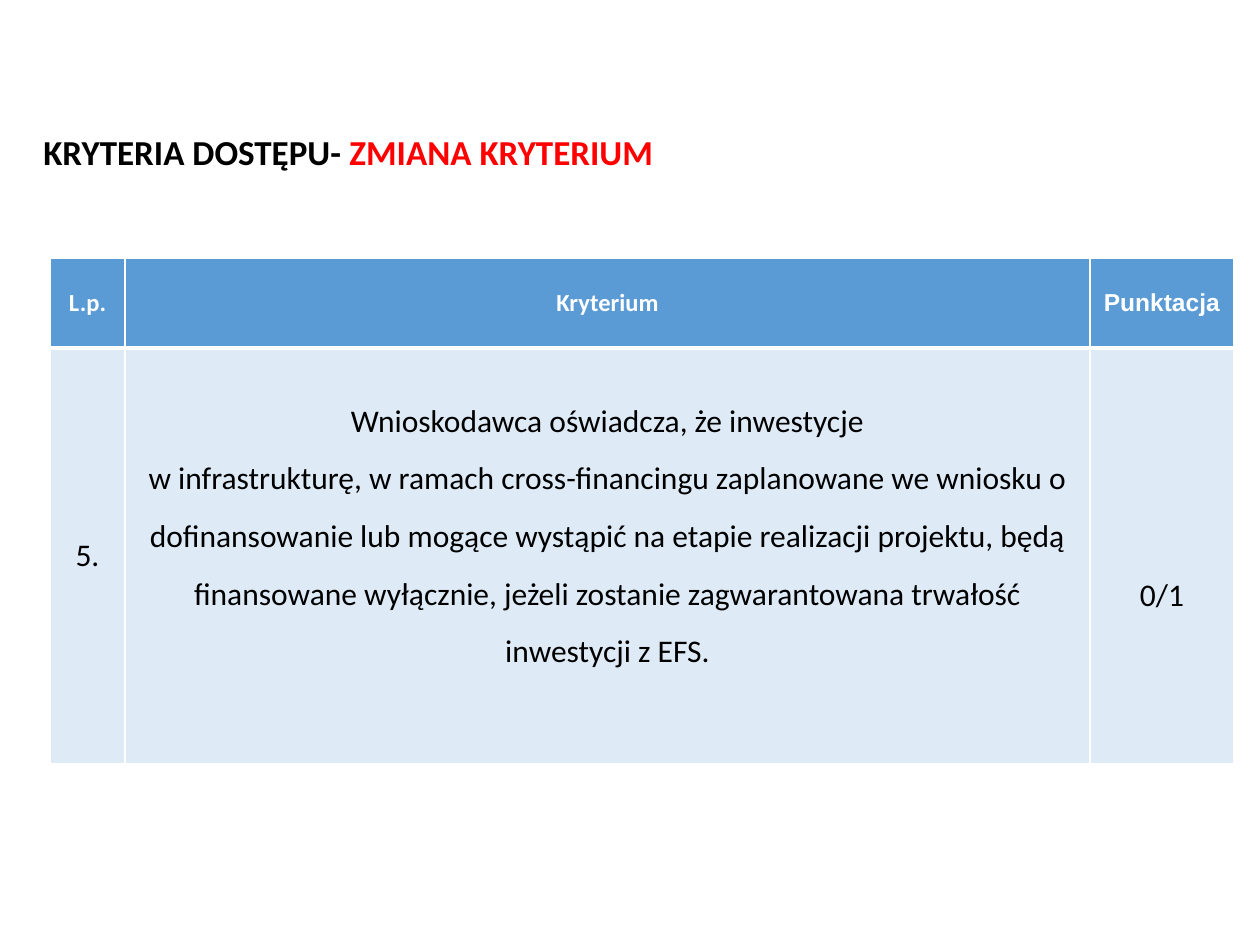
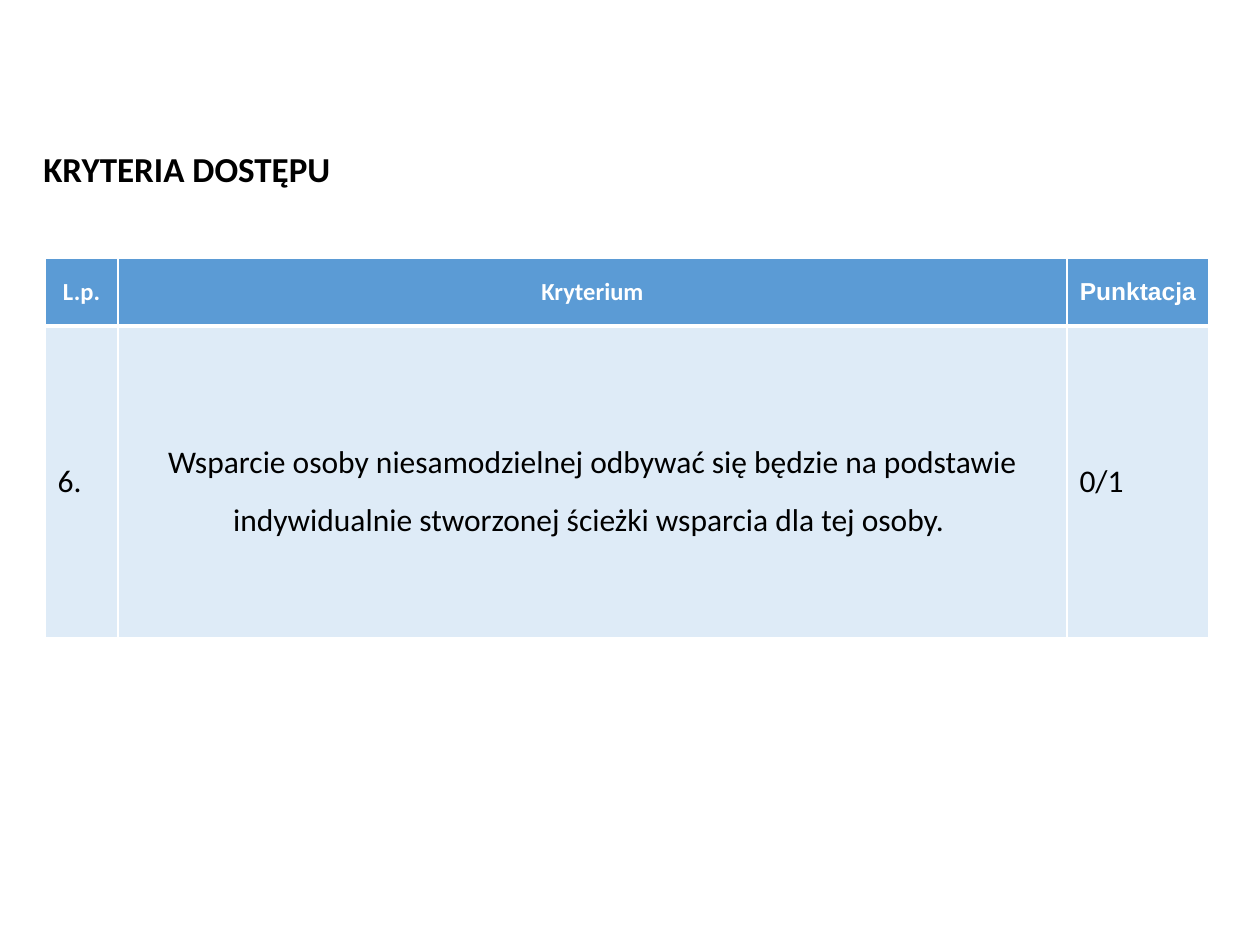
from lxml.etree import SubElement
from pptx import Presentation
from pptx.dml.color import RGBColor
from pptx.enum.text import MSO_ANCHOR as Anchor, MSO_AUTO_SIZE as AutoSize, PP_ALIGN as Align
from pptx.oxml.ns import qn
from pptx.util import Pt

EMU_PER_PX = 914400 / 126
COLORS = {
    "black": "000000",
    "red": "FF0000",
    "white": "FFFFFF",
    "header": "5B9BD5",
    "body": "DEEBF7",
}
TITLE_FONT = {"name": "Calibri", "size": Pt(20), "bold": True}
HEADER_FONT = {"name": "Calibri", "size": Pt(14), "bold": True}
BODY_FONT = {"name": "Calibri", "size": Pt(18), "bold": False}
HEADINGS = [("L.p.", "Calibri"), ("Kryterium", "Calibri"), ("Punktacja", "Arial")]
THIN, THICK = 1, 3
NARROW = {"margin_left": 9, "margin_right": 9}
TIGHT = {**NARROW, "margin_top": 0, "margin_bottom": 0}


def px(value):
    return round(value * EMU_PER_PX)


def set_values(target, values):
    for name, value in values.items():
        setattr(target, name, value)


def add_span(para, text, font, color):
    span = para.add_run()
    span.text = text
    set_values(span.font, font)
    span.font.color.rgb = RGBColor.from_string(COLORS[color])


def add_borders(cell, top, bottom):
    properties = cell._tc.get_or_add_tcPr()
    for side, points in zip("LRTB", (THIN, THIN, top, bottom)):
        line = SubElement(properties, qn(f"a:ln{side}"), w=str(Pt(points)))
        fill = SubElement(line, qn("a:solidFill"))
        SubElement(fill, qn("a:srgbClr"), val=COLORS["white"])


def fill_cell(cell, lines, font, text_color, fill, borders, align=Align.CENTER, spacing=None, margins=None):
    add_borders(cell, *borders)
    cell.fill.solid()
    cell.fill.fore_color.rgb = RGBColor.from_string(COLORS[fill])
    cell.vertical_anchor = Anchor.MIDDLE
    set_values(cell, {name: px(value) for name, value in (margins or {}).items()})
    frame = cell.text_frame
    for index, text in enumerate(lines):
        para = frame.add_paragraph() if index else frame.paragraphs[0]
        set_values(para, {"alignment": align, "line_spacing": spacing})
        add_span(para, text, font, text_color)


def add_title(page, box, spans):
    frame = page.shapes.add_textbox(*map(px, box)).text_frame
    set_values(frame, {
        "word_wrap": True,
        "auto_size": AutoSize.SHAPE_TO_FIT_TEXT,
        "vertical_anchor": Anchor.MIDDLE,
    })
    for text, color in spans:
        add_span(frame.paragraphs[0], text, TITLE_FONT, color)


def add_criteria_table(page, corner, widths, heights, entries):
    box = (*corner, sum(widths), sum(heights))
    table = page.shapes.add_table(len(heights), len(widths), *map(px, box)).table
    set_values(table, {"first_row": False, "horz_banding": False})
    for column, width in zip(table.columns, widths):
        column.width = px(width)
    for row, height in zip(table.rows, heights):
        row.height = px(height)
    for index, (heading, font_name) in enumerate(HEADINGS):
        fill_cell(table.cell(0, index), [heading], {**HEADER_FONT, "name": font_name},
                  "white", "header", (THIN, THICK), margins=NARROW)
    for index, entry in enumerate(entries):
        fill_cell(table.cell(1, index), font=BODY_FONT, text_color="black", fill="body",
                  borders=(THICK, THIN), **entry)


def add_criterion_page(deck, title_box, title, corner, widths, heights, entries):
    page = deck.slides.add_slide(deck.slide_layouts[6])
    add_criteria_table(page, corner, widths, heights, entries)
    add_title(page, title_box, title)


def main():
    deck = Presentation()
    set_values(deck, {"slide_width": px(1260), "slide_height": px(945)})
    add_criterion_page(
        deck,
        title_box=(31, 124, 693, 55),
        title=[("KRYTERIA DOSTĘPU- ", "black"), ("ZMIANA KRYTERIUM", "red")],
        corner=(50, 258),
        widths=(75, 965, 144),
        heights=(90, 416),
        entries=[
            {"lines": ["5."]},
            {
                "lines": [
                    "Wnioskodawca oświadcza, że inwestycje",
                    "w infrastrukturę, w ramach cross-financingu zaplanowane we wniosku o "
                    "dofinansowanie lub mogące wystąpić na etapie realizacji projektu, będą "
                    "finansowane wyłącznie, jeżeli zostanie zagwarantowana trwałość "
                    "inwestycji z EFS.",
                ],
                "spacing": 1.5,
                "margins": {**TIGHT, "margin_bottom": 58},
            },
            {"lines": ["0/1"], "margins": {**TIGHT, "margin_top": 80}},
        ],
    )
    add_criterion_page(
        deck,
        title_box=(31, 141, 466, 55),
        title=[("KRYTERIA DOSTĘPU", "black")],
        corner=(45, 258),
        widths=(73, 949, 142),
        heights=(68, 312),
        entries=[
            {"lines": ["6."], "align": Align.LEFT},
            {
                "lines": [
                    "Wsparcie osoby niesamodzielnej odbywać się będzie na podstawie "
                    "indywidualnie stworzonej ścieżki wsparcia dla tej osoby. ",
                ],
                "spacing": 1.5,
            },
            {"lines": ["0/1"], "align": Align.LEFT},
        ],
    )
    deck.save("out.pptx")


if __name__ == "__main__":
    main()
